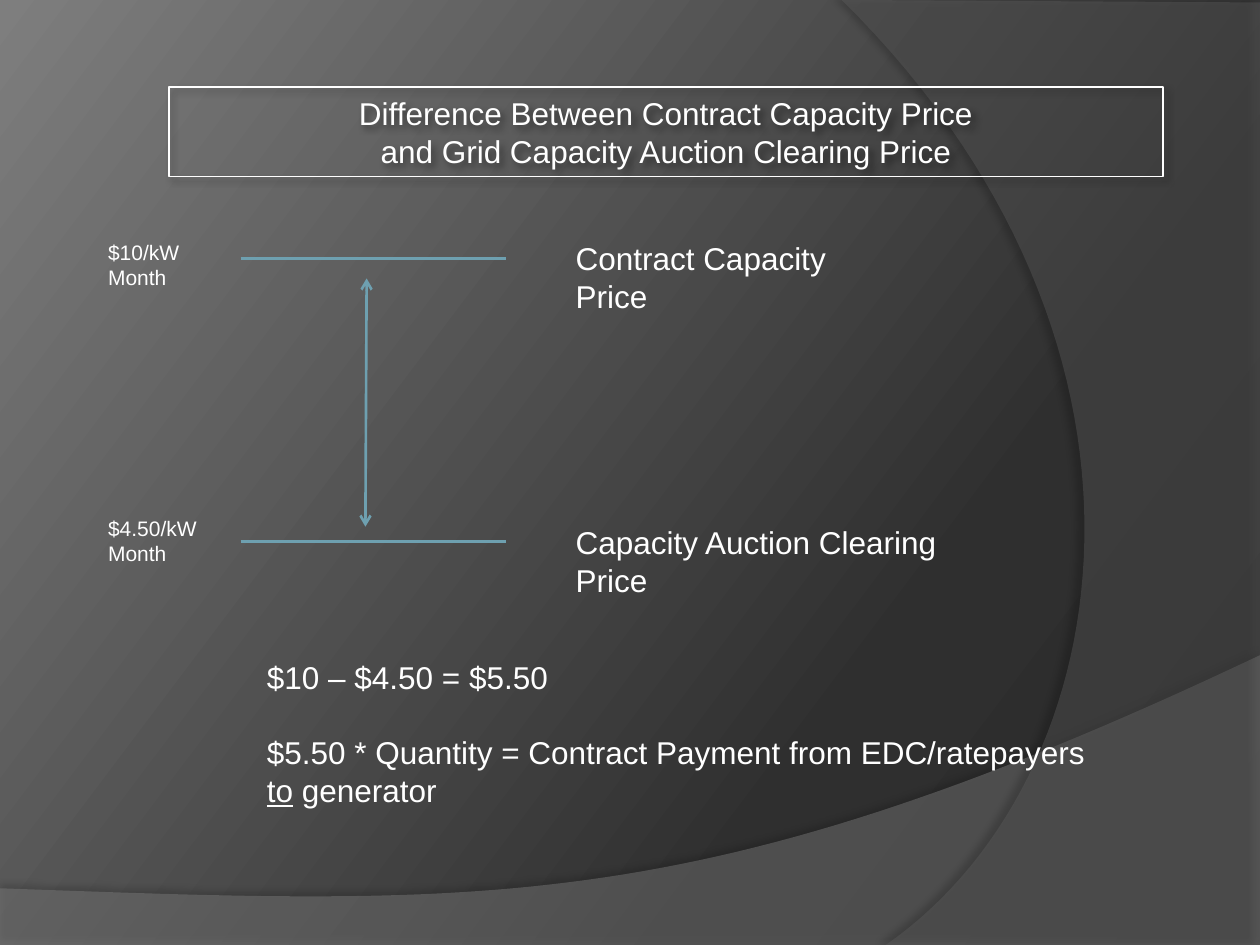
from lxml.etree import SubElement
from pptx import Presentation
from pptx.dml.color import RGBColor
from pptx.enum.shapes import MSO_CONNECTOR as Connector
from pptx.enum.text import MSO_ANCHOR as Anchor, MSO_AUTO_SIZE as AutoSize, PP_ALIGN as Align
from pptx.oxml.ns import qn
from pptx.util import Inches, Pt

THEME = {
    "text": RGBColor.from_string("FFFFFF"),
    "accent": RGBColor.from_string("6EA0B0"),
    "shadow": "000000",
    "backdrop": [(0, "282828"), (30, "2F2F2F"), (100, "7E7E7E")],
    "lower_wave": "7F7F7F",
    "right_wave": "5E5E5E",
    "font": "Arial",
    "body_size": Pt(18),
    "label_size": Pt(12),
    "rule_width": Pt(1.5),
    "frame_width": Pt(0.75),
}


def add_shadow(target, alpha, blur, distance, angle):
    target.shadow.inherit = False
    effects = target._element.spPr.find(qn("a:effectLst"))
    outer = SubElement(effects, qn("a:outerShdw"), blurRad=str(Pt(blur)), dist=str(Pt(distance)),
                       dir=str(angle * 60000), algn="ctr", rotWithShape="0")
    tint = SubElement(outer, qn("a:srgbClr"), val=THEME["shadow"])
    SubElement(tint, qn("a:alpha"), val=str(alpha * 1000))


def write_text(frame, paragraphs, size, align=Align.LEFT):
    for attribute, value in {"word_wrap": True, "auto_size": AutoSize.NONE}.items():
        setattr(frame, attribute, value)
    for index, pieces in enumerate(paragraphs):
        paragraph = frame.paragraphs[0] if index == 0 else frame.add_paragraph()
        paragraph.alignment = align
        for words, underline in pieces:
            run = paragraph.add_run()
            run.text = words
            run.font.color.rgb = THEME["text"]
            for attribute, value in {"name": THEME["font"], "size": size, "underline": underline}.items():
                setattr(run.font, attribute, value)


prs = Presentation()
prs.slide_width, prs.slide_height = Inches(10), Inches(7.5)
slide = prs.slides.add_slide(prs.slide_layouts[5])
shapes = slide.shapes

backdrop = slide.background.fill
backdrop.gradient()
backdrop.gradient_angle = 143
stops = slide.background._cSld.find(".//" + qn("a:gsLst"))
for stop in list(stops):
    stops.remove(stop)
for position, color in THEME["backdrop"]:
    stop = SubElement(stops, qn("a:gs"), pos=str(position * 1000))
    SubElement(stop, qn("a:srgbClr"), val=color)

waves = [
    ([(0, 7.05), (0, 7.51), (10, 7.51), (10, 5.2)], [(5.59, 7.29), (3.91, 7.19), (0, 7.05)],
     THEME["lower_wave"], 45, (35, 4, 3.5, 270)),
    ([(10, 0.02), (10, 7.5), (7.03, 7.5)], [(8.91, 6.19), (9.47, 2.75), (6.68, 0)],
     THEME["right_wave"], 40, (45, 4, 4, 180)),
]
for corners, bend, color, opacity, shadow in waves:
    controls = [corners[-1], *bend]
    outline = list(corners)
    for step in range(1, 61):
        t = step / 60
        weights = ((1 - t) ** 3, 3 * t * (1 - t) ** 2, 3 * t ** 2 * (1 - t), t ** 3)
        outline.append(tuple(sum(w * point[axis] for w, point in zip(weights, controls))
                             for axis in (0, 1)))
    points = [(Inches(x), Inches(y)) for x, y in outline]
    builder = shapes.build_freeform(*points[0])
    builder.add_line_segments(points[1:], close=True)
    wave = builder.convert_to_shape()
    wave.fill.solid()
    wave.fill.fore_color.rgb = RGBColor.from_string(color)
    tint = wave._element.spPr.find(qn("a:solidFill"))[0]
    SubElement(tint, qn("a:alpha"), val=str(opacity * 1000))
    wave.line.fill.background()
    add_shadow(wave, *shadow)

price_lines = [
    (1.91, 2.05, 4.02, 2.05, False),
    (1.91, 4.3, 4.02, 4.3, False),
    (2.91, 2.21, 2.9, 4.18, True),
]
for x1, y1, x2, y2, is_gap in price_lines:
    rule = shapes.add_connector(Connector.STRAIGHT, Inches(x1), Inches(y1), Inches(x2), Inches(y2))
    rule.line.color.rgb = THEME["accent"]
    rule.line.width = THEME["rule_width"]
    if is_gap:
        for end in ("a:headEnd", "a:tailEnd"):
            SubElement(rule.line._get_or_add_ln(), qn(end), type="arrow")
    SubElement(rule._element.spPr, qn("a:effectLst"))

captions = [
    (4.47, 1.85, 2.57, 0.4, "Contract Capacity Price", THEME["body_size"]),
    (4.47, 4.1, 3.49, 0.4, "Capacity Auction Clearing Price", THEME["body_size"]),
    (0.76, 1.85, 0.93, 0.5, "$10/kW Month", THEME["label_size"]),
    (0.76, 4.04, 0.93, 0.5, "$4.50/kW Month", THEME["label_size"]),
]
for *box, words, size in captions:
    caption = shapes.add_textbox(*map(Inches, box))
    write_text(caption.text_frame, [[(words, False)]], size)

calculation = shapes.add_textbox(Inches(2.02), Inches(5.17), Inches(6.74), Inches(1.31)).text_frame
write_text(calculation, [
    [("$10 – $4.50 = $5.50", False)],
    [("$5.50 * Quantity = Contract Payment from EDC/ratepayers ", False), ("to", True),
     (" generator", False)],
], THEME["body_size"])
calculation.paragraphs[1].space_before = Pt(21.7)

title = shapes.title
placement = {"left": 1.34, "top": 0.69, "width": 7.89, "height": 0.71}
for attribute, value in placement.items():
    setattr(title, attribute, Inches(value))
title.line.color.rgb = THEME["text"]
title.line.width = THEME["frame_width"]
add_shadow(title, 43, 4, 3, 45)
title.text_frame.vertical_anchor = Anchor.MIDDLE
write_text(title.text_frame, [
    [("Difference Between Contract Capacity Price", False)],
    [("and Grid Capacity Auction Clearing Price", False)],
], THEME["body_size"], Align.CENTER)
for paragraph in title.text_frame.paragraphs:
    paragraph.space_before = Pt(0)
shapes._spTree.append(title._element)

prs.save("out.pptx")
